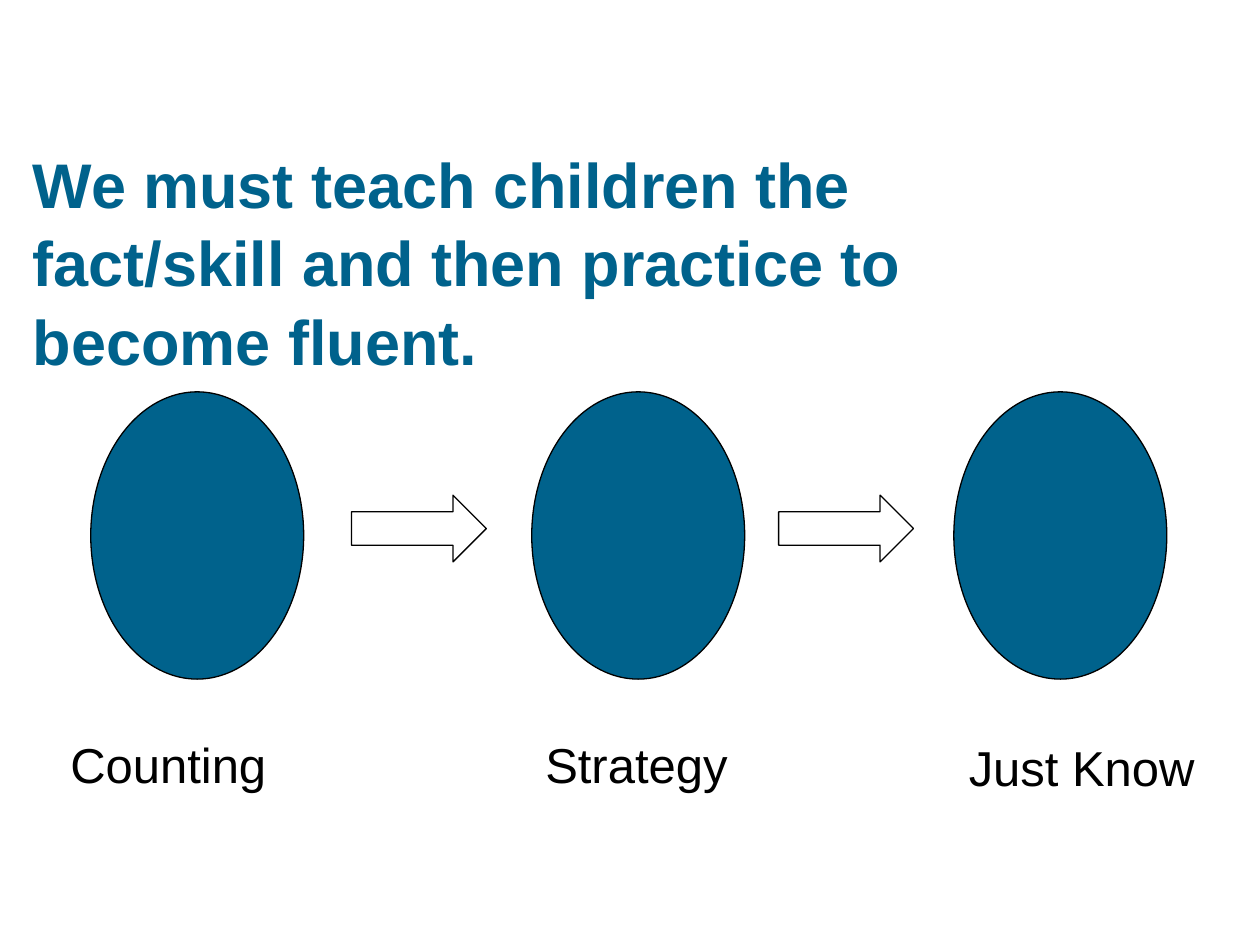
from pptx import Presentation
from pptx import util as u
from pptx.dml.color import RGBColor
from pptx.enum import shapes, text

COLORS = {"blue": "00628C", "black": "000000"}
FONT = "Arial"

# Each stage: label, ellipse left, label left, label top, label width
STAGES = [
    ("Counting", 0.72, 0.46, 5.75, 2.07),
    ("Strategy", 4.22, 4.23, 5.75, 2.13),
    ("Just Know", 7.57, 7.59, 5.77, 2.21),
]
ARROW_LEFTS = [2.79, 6.18]


def color(name):
    return RGBColor.from_string(COLORS[name])


def place(item, left, top, width, height):
    item.left, item.top = u.Inches(left), u.Inches(top)
    item.width, item.height = u.Inches(width), u.Inches(height)


def add_run(para, words, size, color_name, bold=False):
    span = para.add_run()
    span.text = words
    span.font.name = FONT
    span.font.size = u.Pt(size)
    span.font.bold = bold
    span.font.color.rgb = color(color_name)


def set_title(page, words):
    title = page.shapes.title
    place(title, 0.16, 1.8, 8.67, 1.25)
    frame = title.text_frame
    frame.word_wrap = True
    frame.auto_size = text.MSO_AUTO_SIZE.NONE
    frame.vertical_anchor = text.MSO_ANCHOR.BOTTOM
    para = frame.paragraphs[0]
    para.alignment = text.PP_ALIGN.LEFT
    para.line_spacing = 1.04
    add_run(para, words, 36, "blue", bold=True)


def add_outlined_shape(page, kind, left, top, width, height, fill=None):
    shape = page.shapes.add_shape(
        kind, u.Inches(left), u.Inches(top), u.Inches(width), u.Inches(height))
    shape.shadow.inherit = False
    if fill:
        shape.fill.solid()
        shape.fill.fore_color.rgb = color(fill)
    else:
        shape.fill.background()
    shape.line.color.rgb = color("black")
    shape.line.width = u.Pt(0.75)


def add_label(page, words, left, top, width):
    box = page.shapes.add_textbox(
        u.Inches(left), u.Inches(top), u.Inches(width), u.Inches(0.57))
    frame = box.text_frame
    frame.word_wrap = True
    frame.margin_top = u.Inches(0.08)
    add_run(frame.paragraphs[0], words, 28, "black")


def main():
    deck = Presentation()
    deck.slide_width, deck.slide_height = u.Inches(10), u.Inches(7.5)
    page = deck.slides.add_slide(deck.slide_layouts[5])

    # Heading
    set_title(page, "We must teach children the fact/skill and then "
                    "practice to become fluent.")

    # Stages with their labels
    for words, oval_left, label_left, label_top, label_width in STAGES:
        add_outlined_shape(page, shapes.MSO_SHAPE.OVAL,
                           oval_left, 3.11, 1.69, 2.28, fill="blue")
        add_label(page, words, label_left, label_top, label_width)

    # Arrows between the stages
    for left in ARROW_LEFTS:
        add_outlined_shape(page, shapes.MSO_SHAPE.RIGHT_ARROW,
                           left, 3.93, 1.07, 0.53)

    deck.save("out.pptx")


if __name__ == "__main__":
    main()
